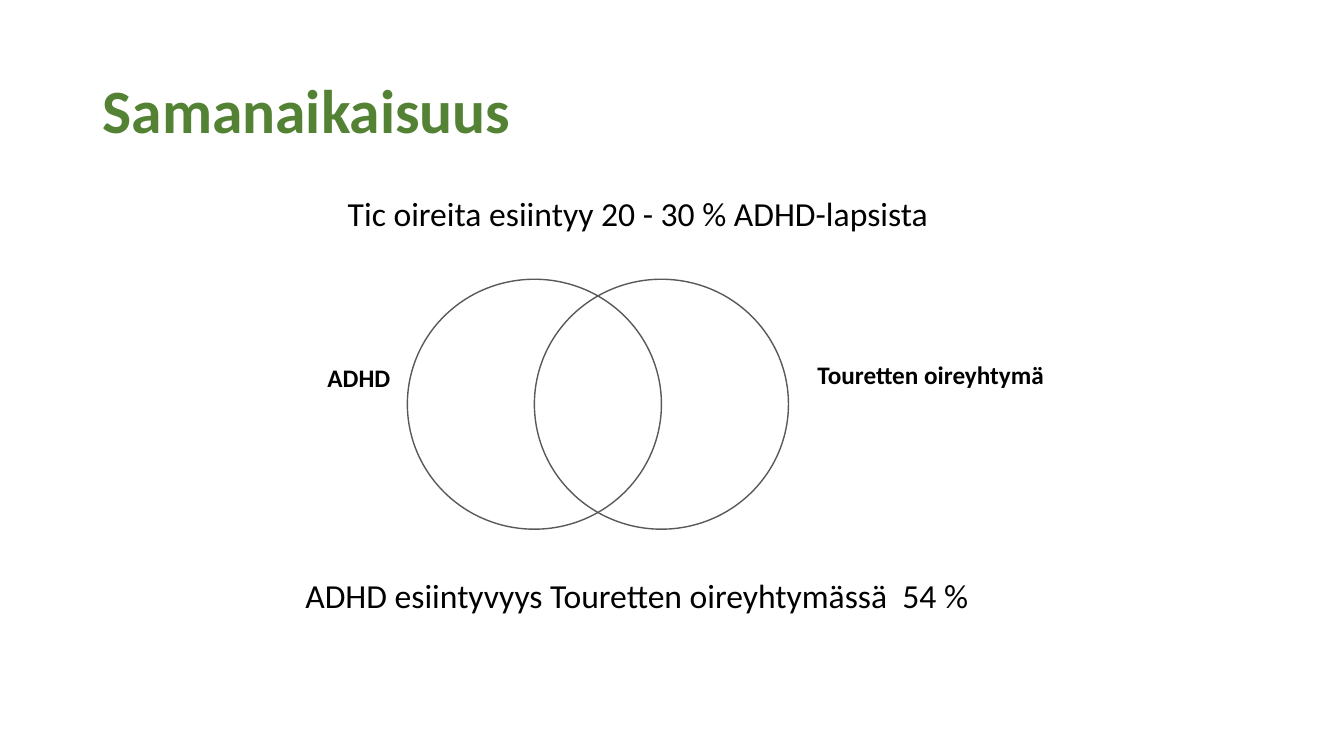
from dataclasses import dataclass

from pptx import Presentation
from pptx import util as u
from pptx.dml.color import RGBColor
from pptx.enum import shapes, text
from pptx.slide import Slide

FONT = "Calibri"
GREEN, BLACK, GREY = "548235", "000000", "595959"


@dataclass
class Label:
    words: str
    left: float
    top: float
    width: float
    height: float
    size: int
    bold: bool = False
    color: str = BLACK
    wrap: bool = False
    anchor: text.MSO_ANCHOR = text.MSO_ANCHOR.TOP
    line_spacing: float = 1.0


@dataclass
class Circle:
    left: float
    top: float
    width: float
    height: float


def rgb(value: str) -> RGBColor:
    return RGBColor.from_string(value)


def draw_label(page: Slide, label: Label) -> None:
    box = page.shapes.add_textbox(
        u.Inches(label.left), u.Inches(label.top),
        u.Inches(label.width), u.Inches(label.height))
    frame = box.text_frame
    frame.word_wrap = label.wrap
    frame.vertical_anchor = label.anchor
    if not label.wrap:
        frame.auto_size = text.MSO_AUTO_SIZE.SHAPE_TO_FIT_TEXT
    para = frame.paragraphs[0]
    para.line_spacing = label.line_spacing
    span = para.add_run()
    span.text = label.words
    span.font.name = FONT
    span.font.size = u.Pt(label.size)
    span.font.bold = label.bold
    span.font.color.rgb = rgb(label.color)


def draw_circle(page: Slide, circle: Circle) -> None:
    oval = page.shapes.add_shape(
        shapes.MSO_SHAPE.OVAL, u.Inches(circle.left), u.Inches(circle.top),
        u.Inches(circle.width), u.Inches(circle.height))
    oval.shadow.inherit = False
    oval.fill.background()
    oval.line.color.rgb = rgb(GREY)
    oval.line.width = u.Pt(1)


# Heading
TITLE = Label("Samanaikaisuus", 0.92, 0.4, 11.5, 1.45, 44, bold=True,
              color=GREEN, wrap=True, anchor=text.MSO_ANCHOR.MIDDLE,
              line_spacing=0.9)

# Two overlapping circles, the second shifted by half a width
WIDTH, HEIGHT = 2.52, 2.48
CIRCLES = [Circle(4.04 + step * WIDTH / 2, 2.77, WIDTH, HEIGHT)
           for step in range(2)]

# Circle names and prevalence statements
LABELS = [
    Label("ADHD", 3.15, 3.55, 0.83, 0.4, 18, bold=True),
    Label("Touretten oireyhtymä", 8.01, 3.52, 2.47, 0.4, 18, bold=True),
    Label("Tic oireita esiintyy 20 - 30 % ADHD-lapsista",
          3.35, 1.86, 6.01, 0.5, 24),
    Label("ADHD esiintyvyys Touretten oireyhtymässä  54 %",
          2.93, 5.65, 6.85, 0.5, 24),
]


def main() -> None:
    deck = Presentation()
    deck.slide_width = u.Inches(13.33)
    deck.slide_height = u.Inches(7.5)
    page = deck.slides.add_slide(deck.slide_layouts[6])
    draw_label(page, TITLE)
    for circle in CIRCLES:
        draw_circle(page, circle)
    for label in LABELS:
        draw_label(page, label)
    deck.save("out.pptx")


if __name__ == "__main__":
    main()
